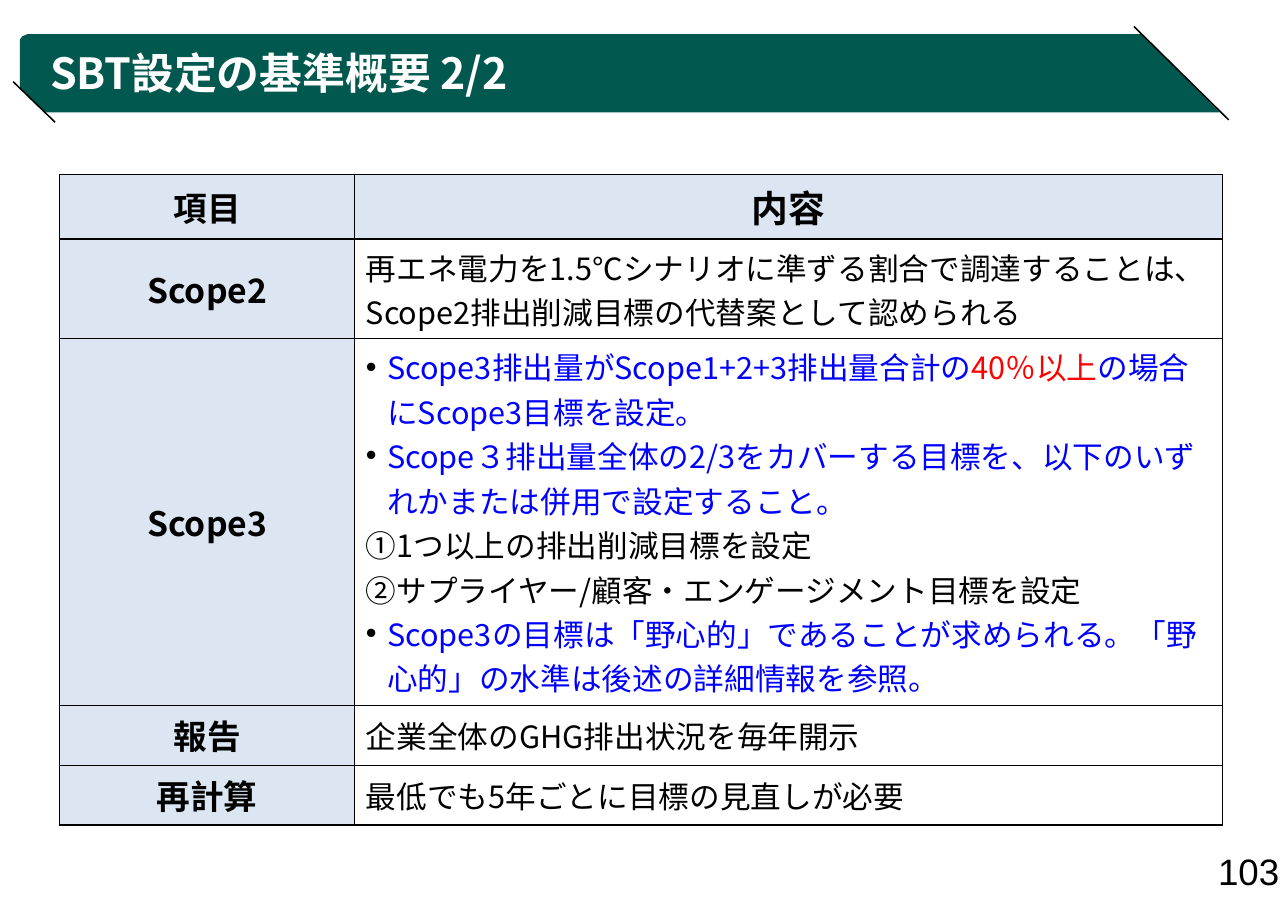
import pptx
import pptx.dml.color
import pptx.enum.shapes
import pptx.enum.text
import pptx.oxml
import pptx.oxml.ns
import pptx.util

Pt = pptx.util.Pt
ALIGN = pptx.enum.text.PP_ALIGN
ANCHOR = pptx.enum.text.MSO_ANCHOR
NS = pptx.oxml.ns.nsdecls("a")
CJK = "Noto Sans CJK JP"
COLORS = {"banner": "00584E", "label": "DCE6F2", "text": "000000",
          "point": "0000FF", "stress": "FF0000", "title": "FFFFFF"}

LABELS = ["項目", "Scope2", "Scope3", "報告", "再計算"]
ROW_HEIGHTS = [42.2, 65.1, 239.8, 39.1, 39.1]
DETAILS = [
    [[("内容", "text")]],
    [[("再エネ電力を1.5℃シナリオに準ずる割合で調達することは、"
       "Scope2排出削減目標の代替案として認められる", "text")]],
    [[("Scope3排出量がScope1+2+3排出量合計の", "point"), ("40％以上", "stress"),
      ("の場合にScope3目標を設定。", "point")],
     [("Scope３排出量全体の2/3をカバーする目標を、"
       "以下のいずれかまたは併用で設定すること。", "point")],
     [("①1つ以上の排出削減目標を設定", "text")],
     [("②サプライヤー/顧客・エンゲージメント目標を設定", "text")],
     [("Scope3の目標は「野心的」であることが求められる。"
       "「野心的」の水準は後述の詳細情報を参照。", "point")]],
    [[("企業全体のGHG排出状況を毎年開示", "text")]],
    [[("最低でも5年ごとに目標の見直しが必要", "text")]],
]


def rgb(color):
    return pptx.dml.color.RGBColor.from_string(COLORS[color])


def add_words(paragraph, words, size, color="text", bold=False, font=CJK):
    run = paragraph.add_run()
    run.text = words
    run.font.size = Pt(size)
    run.font.bold = bold
    run.font.color.rgb = rgb(color)
    run.font.name = font
    run.font._element.append(pptx.oxml.parse_xml(f'<a:ea {NS} typeface="{CJK}"/>'))


def add_bullet(paragraph):
    properties = paragraph._p.get_or_add_pPr()
    properties.set("marL", str(Pt(14)))
    properties.set("indent", str(-Pt(14)))
    for mark in (f'<a:buClr {NS}><a:srgbClr val="{COLORS["text"]}"/></a:buClr>',
                 f'<a:buFont {NS} typeface="Arial"/>',
                 f'<a:buChar {NS} char="•"/>'):
        properties.append(pptx.oxml.parse_xml(mark))


def add_frame(slide, left, top, width, height, anchor, wrap):
    frame = slide.shapes.add_textbox(Pt(left), Pt(top), Pt(width), Pt(height)).text_frame
    frame.word_wrap = wrap
    frame.vertical_anchor = anchor
    frame.margin_left = frame.margin_top = frame.margin_right = frame.margin_bottom = 0
    return frame


def add_title_banner(slide, left, top, width, height):
    outline = [(16.5, height), (width, height), (width - 50.3, 0), (5, 0),
               (1.5, 1.5), (0, 3.6), (0, height - 15.8)]
    corners = [(Pt(left + x), Pt(top + y)) for x, y in outline]
    builder = slide.shapes.build_freeform(*corners[0])
    builder.add_line_segments(corners[1:], close=True)
    banner = builder.convert_to_shape()
    banner.shadow.inherit = False
    banner.fill.solid()
    banner.fill.fore_color.rgb = rgb("banner")
    banner.line.fill.background()

    for x1, y1, x2, y2 in ((width - 56, -5, width + 6, height + 5),
                           (-4.4, height - 20, 23, height + 6.5)):
        slash = slide.shapes.add_connector(
            pptx.enum.shapes.MSO_CONNECTOR.STRAIGHT,
            Pt(left + x1), Pt(top + y1), Pt(left + x2), Pt(top + y2))
        slash.line.color.rgb = rgb("text")
        slash.line.width = Pt(1)
        slash._element.spPr.append(pptx.oxml.parse_xml(f"<a:effectLst {NS}/>"))

    frame = add_frame(slide, left, top, width - 52.5, height, ANCHOR.MIDDLE, True)
    frame.margin_left = Pt(19.8)
    frame.margin_top = Pt(2.9)
    title = frame.paragraphs[0]
    title.line_spacing = 0.9
    add_words(title, "SBT設定の基準概要 2/2", 28, "title", True)


def style_cell(cell, shaded):
    properties = cell._tc.get_or_add_tcPr()
    for side in "LRTB":
        properties.append(pptx.oxml.parse_xml(
            f'<a:ln{side} {NS} w="{Pt(1)}"><a:solidFill>'
            f'<a:srgbClr val="{COLORS["text"]}"/></a:solidFill></a:ln{side}>'))
    cell.vertical_anchor = ANCHOR.MIDDLE
    if shaded:
        cell.fill.solid()
        cell.fill.fore_color.rgb = rgb("label")
    else:
        cell.fill.background()


def add_criteria_table(slide, left, top, width, label_width):
    criteria = slide.shapes.add_table(len(LABELS), 2, Pt(left), Pt(top),
                                      Pt(width), Pt(sum(ROW_HEIGHTS))).table
    criteria.first_row = False
    criteria.horz_banding = False
    criteria.columns[0].width = Pt(label_width)
    criteria.columns[1].width = Pt(width - label_width)

    for row, (label, detail) in enumerate(zip(LABELS, DETAILS)):
        header = row == 0
        criteria.rows[row].height = Pt(ROW_HEIGHTS[row])
        label_cell, detail_cell = criteria.cell(row, 0), criteria.cell(row, 1)
        style_cell(label_cell, True)
        style_cell(detail_cell, header)

        heading = label_cell.text_frame.paragraphs[0]
        heading.alignment = ALIGN.CENTER
        font = "Roboto" if label in ("項目", "再計算") else CJK
        add_words(heading, label, 22, bold=True, font=font)

        frame = detail_cell.text_frame
        for number, pieces in enumerate(detail):
            paragraph = frame.add_paragraph() if number else frame.paragraphs[0]
            if header:
                paragraph.alignment = ALIGN.CENTER
            if pieces[0][1] == "point":
                add_bullet(paragraph)
            for words, color in pieces:
                add_words(paragraph, words, 24 if header else 20, color, header)


def add_page_number(slide, left, top, width, height):
    frame = add_frame(slide, left, top, width, height, ANCHOR.BOTTOM, False)
    frame.paragraphs[0].alignment = ALIGN.CENTER
    add_words(frame.paragraphs[0], "103", 24, font="Arial")


def main():
    deck = pptx.Presentation()
    deck.slide_width = Pt(841.7)
    deck.slide_height = Pt(595.4)
    slide = deck.slides.add_slide(deck.slide_layouts[6])
    add_title_banner(slide, 13, 22.3, 784, 51.1)
    add_page_number(slide, 795, 555.8, 42, 28)
    add_criteria_table(slide, 38.9, 114, 760, 193)
    deck.save("out.pptx")


if __name__ == "__main__":
    main()
